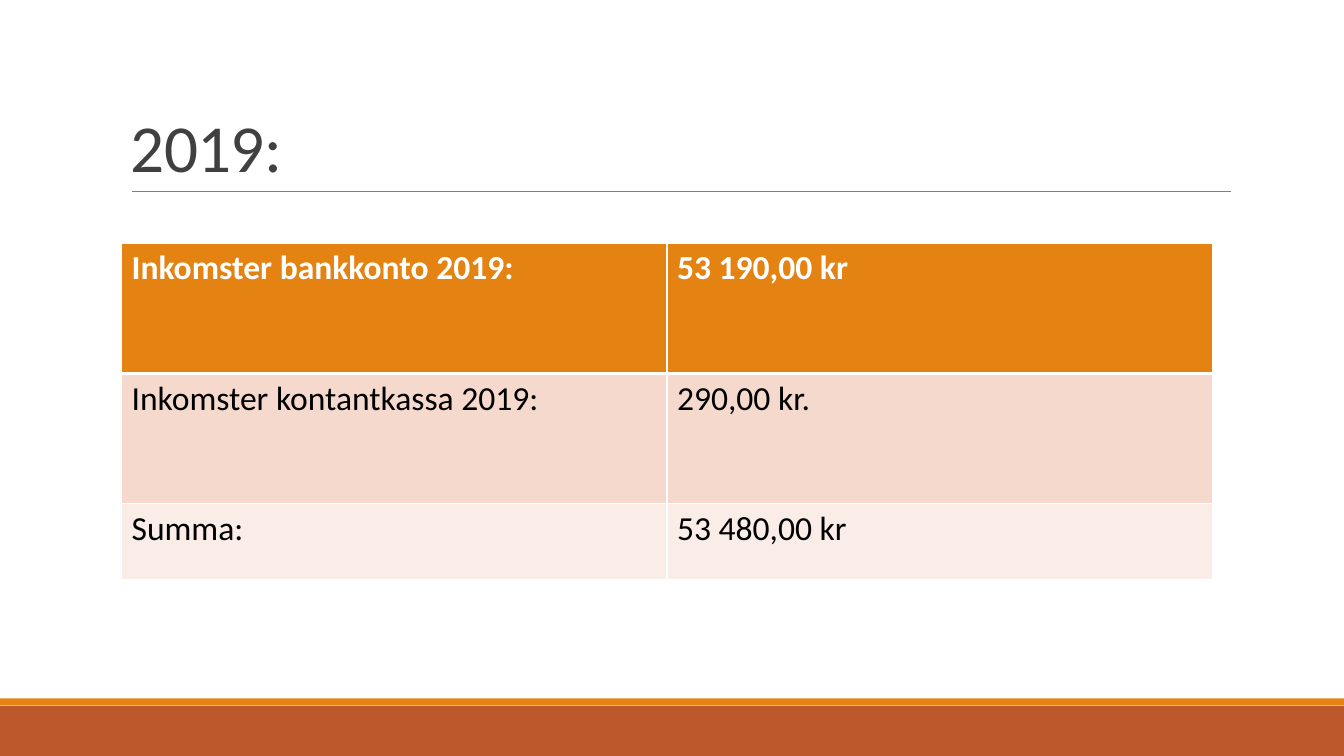
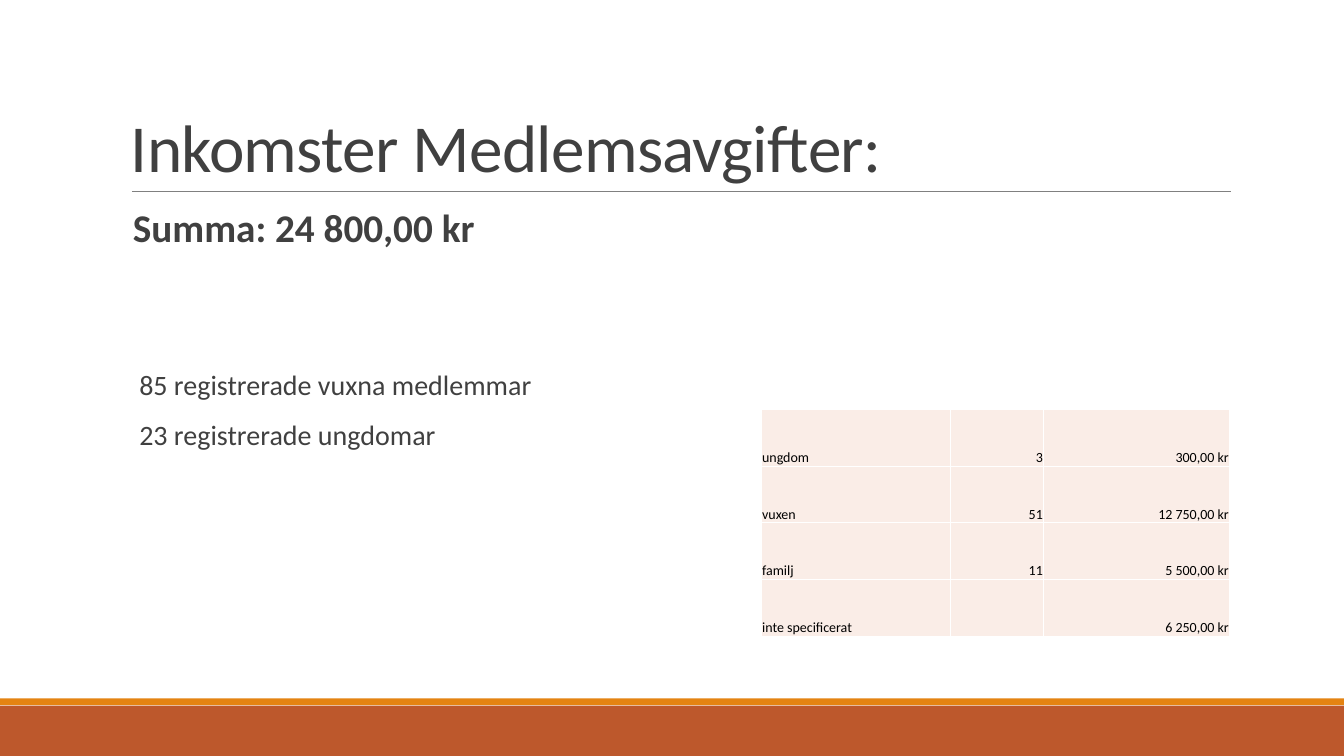
from lxml import etree
from pptx import Presentation
from pptx.dml.color import RGBColor
from pptx.enum.shapes import MSO_CONNECTOR, MSO_SHAPE
from pptx.enum.text import MSO_ANCHOR, PP_ALIGN
from pptx.oxml.ns import qn
from pptx.util import Pt

RECT = MSO_SHAPE.RECTANGLE
STRAIGHT = MSO_CONNECTOR.STRAIGHT
TOP, BOTTOM = MSO_ANCHOR.TOP, MSO_ANCHOR.BOTTOM
LEFT, RIGHT = PP_ALIGN.LEFT, PP_ALIGN.RIGHT

FONT = "Calibri"
SLIDE_W, SLIDE_H = 960, 540
BLANK = 6
WHITE, BLACK, DARK, GREY = "FFFFFF", "000000", "404040", "808080"
ORANGE, RUST = "E48312", "BD582C"
PINK, PALE = "F5D9CC", "FAEDE7"

TITLE_BOX = (86.4, 22.3, 792, 114.5)
BODY_BOX = (95, 145.4, 792, 316.8)
RULE = (94.3, 879.1, 136.8)


def rgb(code):
    return RGBColor.from_string(code)


def write(p, text, size=20, color=DARK, bold=False, align=LEFT, line=None,
          before=None, after=None, indent=0, tracking=None):
    """Put one formatted run in paragraph p; lengths are in points."""
    p.alignment = align
    if line:
        p.line_spacing = line
    if before is not None:
        p.space_before = Pt(before)
    if after is not None:
        p.space_after = Pt(after)
    if indent:
        p._p.get_or_add_pPr().set("marL", str(Pt(indent)))
    r = p.add_run()
    r.text = text
    r.font.name, r.font.size, r.font.bold = FONT, Pt(size), bold
    r.font.color.rgb = rgb(color)
    if tracking:
        r._r.get_or_add_rPr().set("spc", str(round(tracking * 100)))


def set_margins(target, margins):
    """Set left, top, right and bottom margins of a text frame or cell."""
    for side, value in zip(("left", "top", "right", "bottom"), margins):
        setattr(target, f"margin_{side}", Pt(value))


def add_band(slide, top, height, color):
    sp = slide.shapes.add_shape(RECT, 0, Pt(top), Pt(SLIDE_W), Pt(height))
    sp.shadow.inherit = False
    sp.fill.solid()
    sp.fill.fore_color.rgb = rgb(color)
    sp.line.fill.background()


def add_textbox(slide, box, anchor=TOP, margins=(7.2, 3.6, 7.2, 3.6)):
    tf = slide.shapes.add_textbox(*map(Pt, box)).text_frame
    tf.word_wrap = True
    tf.vertical_anchor = anchor
    set_margins(tf, margins)
    return tf


def add_titled_slide(prs, title):
    """Add a slide with the shared footer bands, title and rule."""
    slide = prs.slides.add_slide(prs.slide_layouts[BLANK])
    add_band(slide, 504, 36, RUST)
    add_band(slide, 498.8, 5, ORANGE)

    x1, x2, y = RULE
    rule = slide.shapes.add_connector(STRAIGHT, Pt(x1), Pt(y), Pt(x2), Pt(y))
    rule.line.color.rgb = rgb(GREY)
    rule.line.width = Pt(0.5)
    etree.SubElement(rule._element.spPr, qn("a:effectLst"))

    tf = add_textbox(slide, TITLE_BOX, BOTTOM)
    write(tf.paragraphs[0], title, size=48, line=0.85, tracking=-0.5)
    return slide


def set_borders(cell, top=1, bottom=1):
    """Give a cell white borders, 1 pt at the sides."""
    tc_pr = cell._tc.get_or_add_tcPr()
    widths = {"a:lnL": 1, "a:lnR": 1, "a:lnT": top, "a:lnB": bottom}
    for i, (tag, width) in enumerate(widths.items()):
        ln = etree.Element(qn(tag), w=str(Pt(width)))
        fill = etree.SubElement(ln, qn("a:solidFill"))
        etree.SubElement(fill, qn("a:srgbClr"), val=WHITE)
        tc_pr.insert(i, ln)


def add_table(slide, left, top, widths, heights, rows, fills, size,
              header=False, aligns=None, anchor=TOP,
              margins=(7.2, 3.6, 7.2, 3.6)):
    """Add a table with one fill per row and optionally a bold header."""
    frame = slide.shapes.add_table(len(rows), len(widths), Pt(left), Pt(top),
                                   Pt(sum(widths)), Pt(sum(heights)))
    table = frame.table
    table.first_row = header
    table.horz_banding = False
    for col, width in zip(table.columns, widths):
        col.width = Pt(width)
    for i, (values, height, fill) in enumerate(zip(rows, heights, fills)):
        table.rows[i].height = Pt(height)
        is_head = header and i == 0
        for j, value in enumerate(values):
            cell = table.cell(i, j)
            cell.fill.solid()
            cell.fill.fore_color.rgb = rgb(fill)
            cell.vertical_anchor = anchor
            set_margins(cell, margins)
            set_borders(cell, top=3 if header and i == 1 else 1,
                        bottom=3 if is_head else 1)
            if value:
                write(cell.text_frame.paragraphs[0], value, size=size,
                      color=WHITE if is_head else BLACK, bold=is_head,
                      align=aligns[j] if aligns else LEFT)


def build_income_slide(prs):
    slide = add_titled_slide(prs, "2019:")
    rows = [("Inkomster bankkonto 2019:", "53 190,00 kr"),
            ("Inkomster kontantkassa 2019:", "290,00 kr."),
            ("Summa:", "53 480,00 kr")]
    add_table(slide, 86.8, 173.5, [389.6] * 2, [93.2, 93.2, 54], rows,
              [ORANGE, PINK, PALE], size=24, header=True)


def build_fees_slide(prs):
    slide = add_titled_slide(prs, "Inkomster Medlemsavgifter:")
    tf = add_textbox(slide, BODY_BOX, margins=(0, 3.6, 0, 3.6))
    spacing = {"line": 0.9, "after": 2}
    write(tf.paragraphs[0], "Summa: 24 800,00 kr", size=28, bold=True,
          before=12, **spacing)
    for text, before in (("85 registrerade vuxna medlemmar", 84),
                         ("23 registrerade ungdomar", 12)):
        write(tf.add_paragraph(), text, before=before, indent=4.5, **spacing)

    rows = [("ungdom", "3", "300,00 kr"),
            ("vuxen", "51", "12 750,00 kr"),
            ("familj", "11", "5 500,00 kr"),
            ("inte specificerat", "", "6 250,00 kr")]
    add_table(slide, 543.8, 292.5, [135.2, 66.5, 132.8], [40.5] * len(rows),
              rows, [PALE] * len(rows), size=10, aligns=(LEFT, RIGHT, RIGHT),
              anchor=BOTTOM, margins=(0.6, 0.6, 0.6, 0))


def main():
    prs = Presentation()
    prs.slide_width, prs.slide_height = Pt(SLIDE_W), Pt(SLIDE_H)
    build_income_slide(prs)
    build_fees_slide(prs)
    prs.save("out.pptx")


if __name__ == "__main__":
    main()
